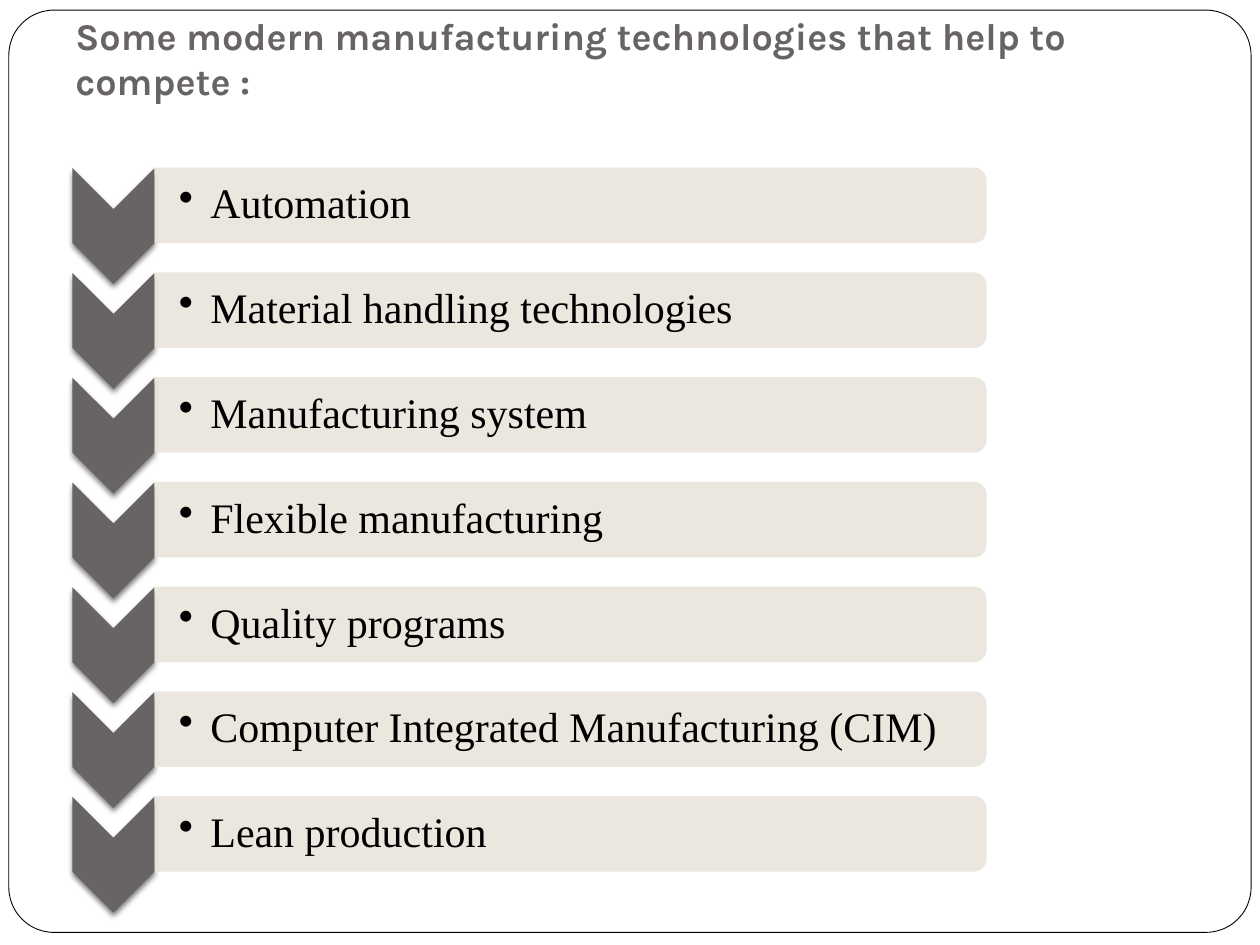
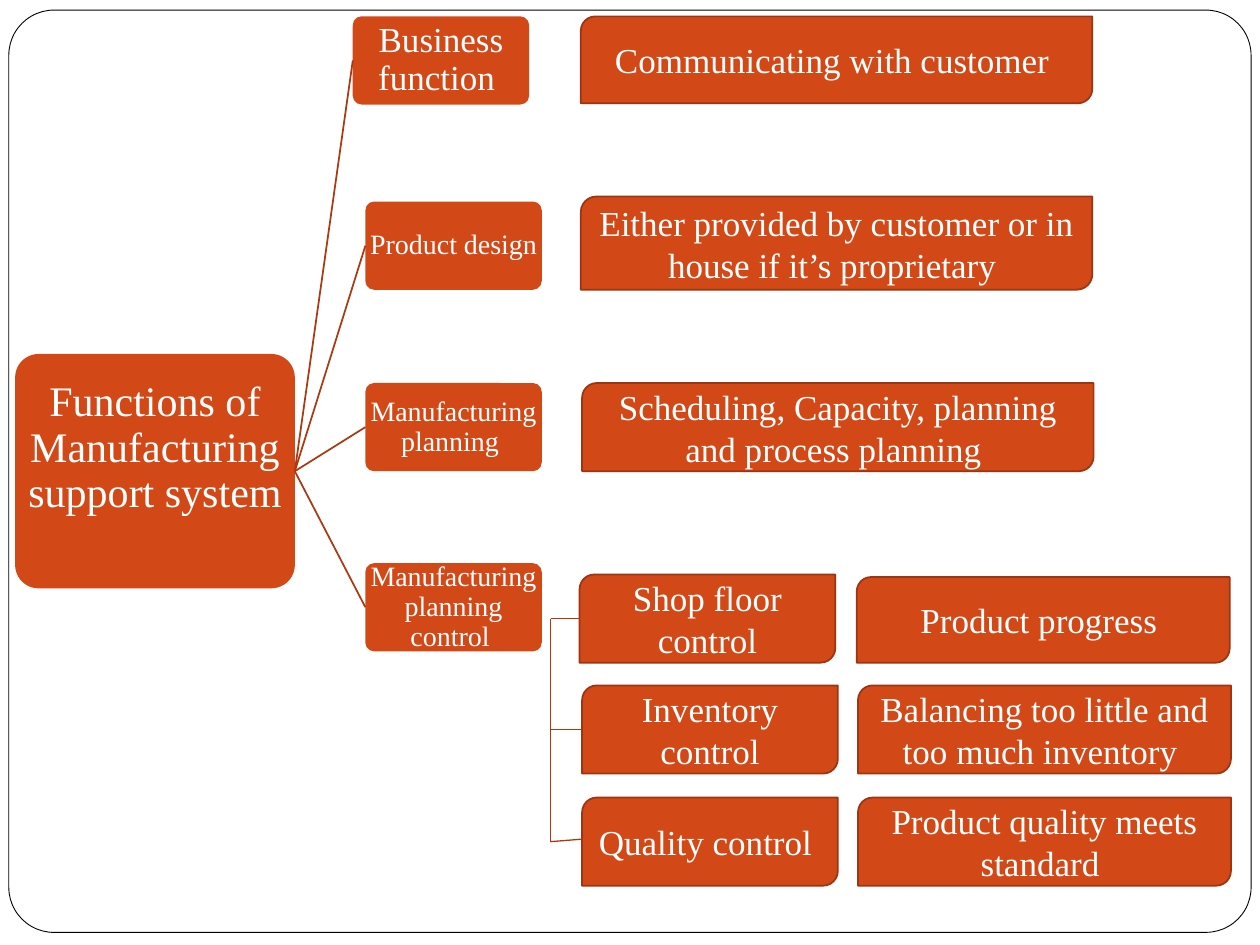
from lxml import etree
from pptx import Presentation
from pptx.dml.color import RGBColor
from pptx.enum import shapes, text
from pptx.oxml import ns
from pptx.util import Inches, Pt

BODY_FONT, TITLE_FONT = "Times New Roman", "Karla"
BLACK, WHITE, GREY, SAND = "000000", "FFFFFF", "696464", "E9E5DC"
ORANGE, EDGE, BRANCH, BRACKET = "D34817", "9C3511", "A93A12", "B1360B"
SHAPE = shapes.MSO_SHAPE
CENTER = text.PP_ALIGN.CENTER

TITLE = "Some modern manufacturing technologies that help to compete :"
TECHNOLOGIES = [
    "Automation",
    "Material handling technologies",
    "Manufacturing system",
    "Flexible manufacturing",
    "Quality programs",
    "Computer Integrated Manufacturing (CIM)",
    "Lean production",
]

ROOT = "Functions of Manufacturing support system"
# name, left, top, text size
FUNCTIONS = [
    ("Business function ", 2.8, 0.13, 20),
    ("Product design ", 2.9, 1.6, 16),
    ("Manufacturing planning ", 2.9, 3.04, 16),
    ("Manufacturing planning control ", 2.9, 4.47, 16),
]
# wording, left, top, width, height
DETAILS = [
    ("Communicating with customer ", 4.61, 0.13, 4.06, 0.69),
    ("Either provided by customer or in house if it’s proprietary ", 4.61, 1.56, 4.06, 0.74),
    ("Scheduling, Capacity, planning and process planning ", 4.62, 3.04, 4.06, 0.7),
    ("Shop floor control", 4.6, 4.56, 2.03, 0.7),
    ("Inventory control", 4.62, 5.44, 2.03, 0.7),
    ("Quality control ", 4.62, 6.33, 2.03, 0.7),
    ("Product progress ", 6.8, 4.58, 2.96, 0.68),
    ("Balancing too little and too much inventory ", 6.81, 5.44, 2.96, 0.7),
    ("Product quality meets standard ", 6.81, 6.33, 2.96, 0.7),
]
SPINE_X = 4.37
SPINE_TOP, SPINE_BOTTOM = 4.91, 6.68
# start and end height, end position across
TWIGS = [(4.91, 4.91, 4.6), (5.79, 5.79, 4.62), (6.68, 6.66, 4.62)]


def rgb(value):
    return RGBColor.from_string(value)


def add_xml(parent, tag, **attributes):
    return etree.SubElement(parent, ns.qn(tag), attributes)


def add_box(page, preset, place, fill, line=None, width=1, corner=None):
    box = page.shapes.add_shape(preset, *map(Inches, place))
    box.shadow.inherit = False
    box.fill.solid()
    box.fill.fore_color.rgb = rgb(fill)
    if line:
        box.line.color.rgb = rgb(line)
        box.line.width = Pt(width)
    else:
        box.line.fill.background()
    if corner is not None:
        box.adjustments[0] = corner
    return box


def write(box, wording, size, color, insets, font=BODY_FONT, align=None,
          anchor=text.MSO_ANCHOR.MIDDLE, spacing=None, bold=False):
    """Put one paragraph in a box; insets run left, top, right, bottom."""
    frame = box.text_frame
    frame.word_wrap = True
    frame.vertical_anchor = anchor
    (frame.margin_left, frame.margin_top,
     frame.margin_right, frame.margin_bottom) = map(Inches, insets)
    frame.text = wording
    para = frame.paragraphs[0]
    para.alignment = align
    para.line_spacing = spacing
    span = para.runs[0].font
    span.name, span.size, span.bold = font, Pt(size), bold
    span.color.rgb = rgb(color)
    return para


def add_line(page, start, end, color, width):
    line = page.shapes.add_connector(
        shapes.MSO_CONNECTOR.STRAIGHT, *map(Inches, (*start, *end)))
    line.line.color.rgb = rgb(color)
    line.line.width = Pt(width)
    add_xml(line._element.spPr, "a:effectLst")
    return line


def add_page(deck):
    """Add a blank page with the rounded frame."""
    page = deck.slides.add_slide(deck.slide_layouts[6])
    add_box(page, SHAPE.ROUNDED_RECTANGLE, (0.07, 0.08, 9.86, 7.32),
            WHITE, BLACK, 0.5, corner=0.049)
    return page


def cast_shadow(box):
    effects = box._element.spPr.find(ns.qn("a:effectLst"))
    shadow = add_xml(effects, "a:outerShdw", blurRad=str(Pt(3)), dist=str(Pt(2)),
                     dir="5400000", rotWithShape="0")
    color = add_xml(shadow, "a:srgbClr", val=BLACK)
    add_xml(color, "a:alpha", val="50000")


def set_opacity(box, percent):
    color = box._element.spPr.find(ns.qn("a:solidFill"))[0]
    add_xml(color, "a:alpha", val=str(percent * 1000))


def add_bullet(para, indent):
    properties = para._p.get_or_add_pPr()
    properties.set("marL", str(Inches(indent)))
    properties.set("indent", str(-Inches(indent)))
    add_xml(properties, "a:buChar", char="•")


def build_technologies(deck):
    page = add_page(deck)
    title = page.shapes.add_textbox(*map(Inches, (0.5, 0.17, 9.33, 0.75)))
    write(title, TITLE, 21.6, GREY, (0.1, 0.05, 0.1, 0.1), TITLE_FONT,
          anchor=text.MSO_ANCHOR.BOTTOM, bold=True)
    pitch = 0.8315
    for row, name in enumerate(TECHNOLOGIES):
        drop = row * pitch
        arrow = add_box(page, SHAPE.CHEVRON, (0.44, 1.47 + drop, 0.92, 0.65), GREY)
        arrow.rotation = 90
        cast_shadow(arrow)
        band = add_box(page, SHAPE.ROUND_2_SAME_RECTANGLE,
                       (4.23, drop - 1.67, 0.6, 6.6), SAND)
        band.rotation = 90
        set_opacity(band, 90)
        label = page.shapes.add_textbox(*map(Inches, (1.23, 1.36 + drop, 6.57, 0.54)))
        para = write(label, name, 24, BLACK, (0.19, 0.02, 0.02, 0.02), spacing=0.9)
        add_bullet(para, 0.25)


def build_functions(deck):
    page = add_page(deck)
    root = add_box(page, SHAPE.ROUNDED_RECTANGLE, (0.12, 2.81, 2.22, 1.86),
                   ORANGE, corner=0.1)
    write(root, ROOT, 24, WHITE, (0.04, 0.04, 0.04, 0.4), align=CENTER, spacing=0.9)

    for name, left, top, size in FUNCTIONS:
        box = add_box(page, SHAPE.ROUNDED_RECTANGLE, (left, top, 1.4, 0.7),
                      ORANGE, corner=0.1)
        write(box, name, size, WHITE, (0.01,) * 4, align=CENTER, spacing=0.9)
        branch = add_line(page, (2.34, 3.74), (left, top + 0.35), BRANCH, 1)
        branch.begin_connect(root, 3)
        branch.end_connect(box, 1)

    for wording, *place in DETAILS:
        box = add_box(page, SHAPE.ROUND_2_DIAG_RECTANGLE, place, ORANGE, EDGE)
        write(box, wording, 20, WHITE, (0.1, 0.05, 0.1, 0.05), align=CENTER)

    add_line(page, (SPINE_X, SPINE_TOP), (SPINE_X, SPINE_BOTTOM), BRACKET, 0.75)
    for start_y, end_y, end_x in TWIGS:
        add_line(page, (SPINE_X, start_y), (end_x, end_y), BRACKET, 0.75)


def main():
    deck = Presentation()
    deck.slide_width, deck.slide_height = Inches(10), Inches(7.5)
    build_technologies(deck)
    build_functions(deck)
    deck.save("out.pptx")


if __name__ == "__main__":
    main()
